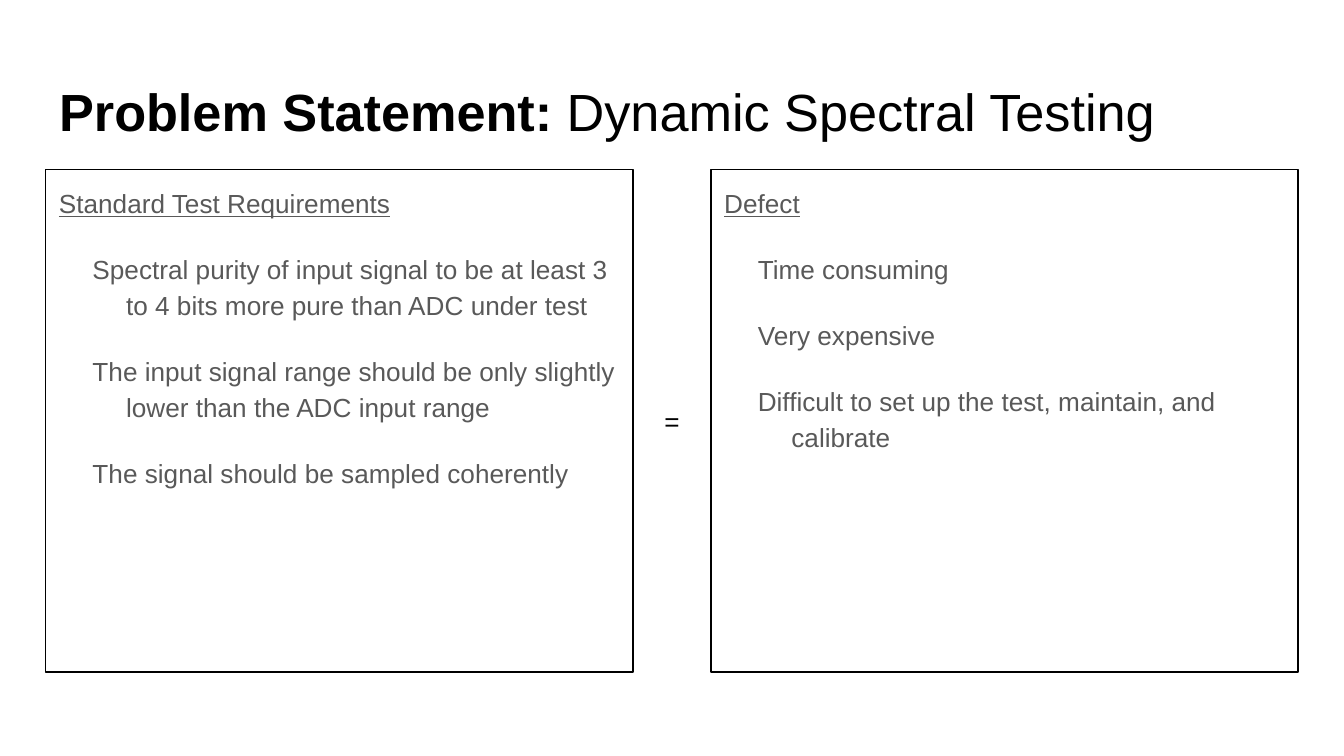
from dataclasses import dataclass

from pptx import Presentation
from pptx.dml.color import RGBColor
from pptx.enum.shapes import MSO_SHAPE
from pptx.enum.text import MSO_ANCHOR, MSO_AUTO_SIZE, PP_ALIGN
from pptx.util import Pt


@dataclass(frozen=True)
class Theme:
    font: str = "Arial"
    ink: RGBColor = RGBColor(0x00, 0x00, 0x00)
    body: RGBColor = RGBColor(0x59, 0x59, 0x59)
    paper: RGBColor = RGBColor(0xFF, 0xFF, 0xFF)
    title_size: float = 28
    body_size: float = 14
    inset: float = 7.2
    indent: float = 18


@dataclass(frozen=True)
class Box:
    left: float
    top: float
    width: float
    height: float

    def lengths(self):
        return tuple(Pt(n) for n in (self.left, self.top, self.width, self.height))


THEME = Theme()
MARGIN = 24.5
PANEL_WIDTH = 314.6
TITLE_BOX = Box(MARGIN, 35.2, 671, 45.1)
PANEL_TOP, PANEL_HEIGHT = 90.8, 269.2
EQUALS_BOX = Box(345.3, 213.8, 29.4, 22.3)

PANELS = [
    ("Standard Test Requirements", [
        "Spectral purity of input signal to be at least 3 to 4 bits more pure than ADC under test",
        "The input signal range should be only slightly lower than the ADC input range",
        "The signal should be sampled coherently",
    ]),
    ("Defect", [
        "Time consuming",
        "Very expensive",
        "Difficult to set up the test, maintain, and calibrate",
    ]),
]


def set_font(paragraph, size, color):
    paragraph.font.name = THEME.font
    paragraph.font.size = Pt(size)
    paragraph.font.color.rgb = color


def prepare_frame(frame, inset=None):
    frame.word_wrap = True
    frame.auto_size = MSO_AUTO_SIZE.NONE
    frame.vertical_anchor = MSO_ANCHOR.TOP
    if inset is not None:
        frame.margin_left = frame.margin_right = Pt(inset)
        frame.margin_top = frame.margin_bottom = Pt(inset)


def place_title(slide, box, lead, rest):
    title = slide.shapes.title
    title.left, title.top, title.width, title.height = box.lengths()
    prepare_frame(title.text_frame, THEME.inset)
    paragraph = title.text_frame.paragraphs[0]
    paragraph.alignment = PP_ALIGN.LEFT
    set_font(paragraph, THEME.title_size, THEME.ink)
    for text, bold in ((lead, True), (rest, False)):
        run = paragraph.add_run()
        run.text = text
        run.font.bold = bold


def add_panel(slide, box, heading, items):
    """Outlined box with an underlined heading and hanging-indent items."""
    panel = slide.shapes.add_shape(MSO_SHAPE.RECTANGLE, *box.lengths())
    panel.shadow.inherit = False
    panel.fill.background()
    panel.line.color.rgb = THEME.ink
    panel.line.width = Pt(0.75)
    frame = panel.text_frame
    prepare_frame(frame, THEME.inset)
    frame.text = "\n".join([heading, *items])
    for paragraph in frame.paragraphs:
        paragraph.alignment = PP_ALIGN.LEFT
        paragraph.line_spacing = 1.15
        paragraph.space_after = Pt(16)
        set_font(paragraph, THEME.body_size, THEME.body)
    frame.paragraphs[0].font.underline = True
    for paragraph in frame.paragraphs[1:]:
        properties = paragraph._p.get_or_add_pPr()
        properties.set("marL", str(Pt(2 * THEME.indent)))
        properties.set("indent", str(-Pt(THEME.indent)))


def add_equals_sign(slide, box):
    frame = slide.shapes.add_textbox(*box.lengths()).text_frame
    prepare_frame(frame)
    paragraph = frame.paragraphs[0]
    paragraph.text = "="
    paragraph.alignment = PP_ALIGN.CENTER
    set_font(paragraph, THEME.body_size, THEME.ink)


def build_comparison_slide(presentation):
    slide = presentation.slides.add_slide(presentation.slide_layouts[5])
    slide.background.fill.solid()
    slide.background.fill.fore_color.rgb = THEME.paper
    place_title(slide, TITLE_BOX, "Problem Statement:", " Dynamic Spectral Testing")
    step = TITLE_BOX.width - PANEL_WIDTH
    for column, (heading, items) in enumerate(PANELS):
        box = Box(MARGIN + column * step, PANEL_TOP, PANEL_WIDTH, PANEL_HEIGHT)
        add_panel(slide, box, heading, items)
    add_equals_sign(slide, EQUALS_BOX)


def main():
    presentation = Presentation()
    presentation.slide_width, presentation.slide_height = Pt(720), Pt(405)
    build_comparison_slide(presentation)
    presentation.save("out.pptx")


if __name__ == "__main__":
    main()
